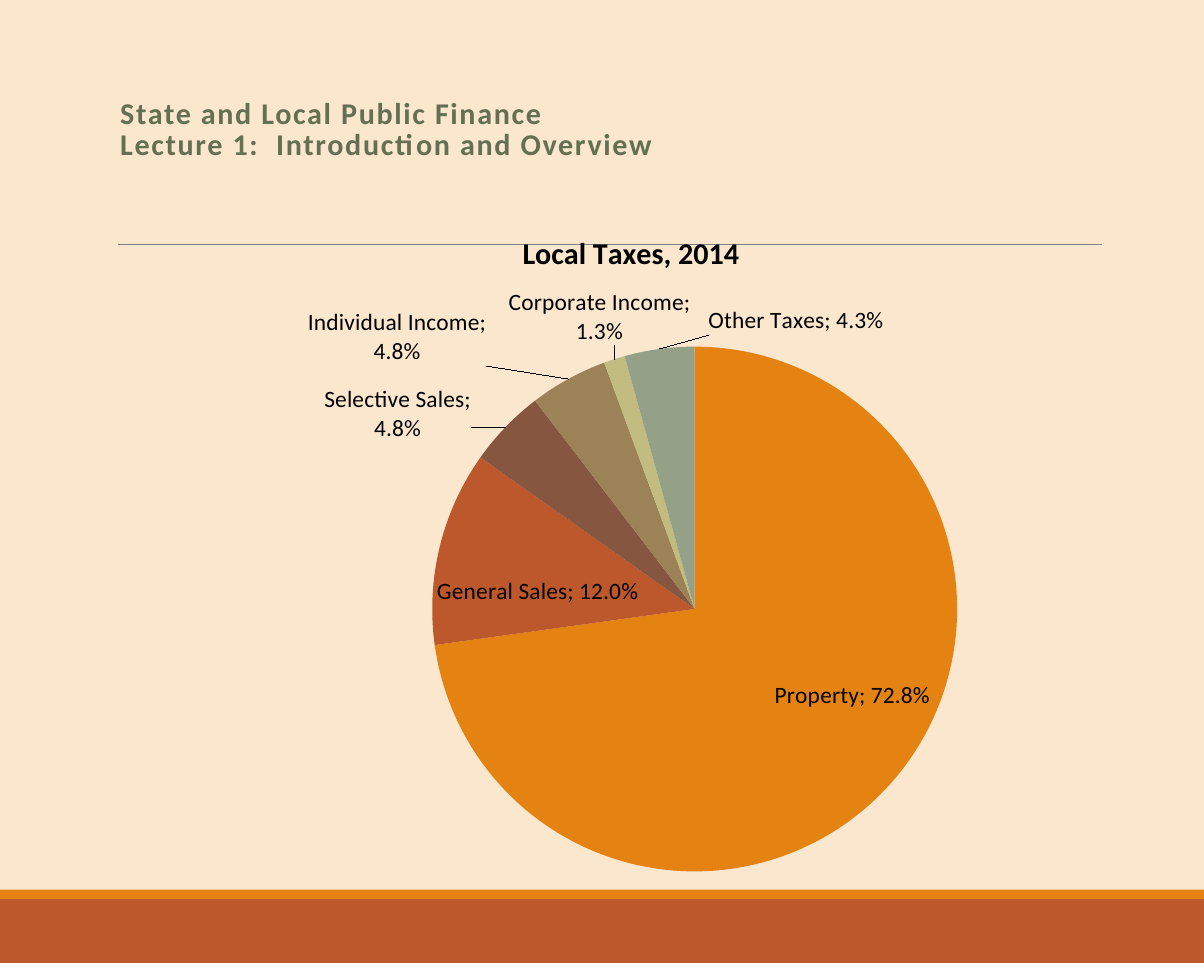
from dataclasses import dataclass
from lxml import etree
from pptx import Presentation
from pptx.chart.data import CategoryChartData as Data
from pptx.dml.color import RGBColor as Rgb
from pptx.enum.chart import XL_CHART_TYPE as Kind
from pptx.enum.shapes import MSO_CONNECTOR as Link, MSO_SHAPE as Form
from pptx.enum.text import MSO_ANCHOR as Anchor
from pptx.oxml import parse_xml
from pptx.oxml.ns import qn
from pptx.util import Inches, Pt


@dataclass
class Theme:
    font: str = "Calibri"
    back: str = "FBE6CE"
    band: str = "BD582C"
    trim: str = "E48312"
    rule: str = "808080"
    head: str = "637052"
    ink: str = "000000"
    big: int = 18
    small: int = 14


HEAD = ["State and Local Public Finance", "Lecture 1:  Introduction and Overview"]
TITLE = "Local Taxes, 2014"
TAXES = [
    ("Property", 0.728, "E48312", "ctr", 0.06, 0),
    ("General Sales", 0.12, "BD582C", "ctr", -0.03, 0.02),
    ("Selective Sales", 0.048, "865640", "outEnd", -0.03, 0.03),
    ("Individual Income", 0.048, "9B8357", "outEnd", -0.08, -0.01),
    ("Corporate Income", 0.013, "C2BC80", "outEnd", 0.08, -0.01),
    ("Other Taxes", 0.043, "94A088", "outEnd", 0.23, -0.01),
]
WIDE, HIGH = 10, 8
BANDS = [(7.47, 0.53, Theme.band), (7.39, 0.08, Theme.trim)]
CHART = (1.12, 1.65, 8.14, 5.74)
MID, RADIUS = (5.77, 5.06), 2.18
FORMAT = "0.0%"
NS = 'xmlns:c="http://schemas.openxmlformats.org/drawingml/2006/chart"'


def tint(fill, color):
    fill.solid()
    fill.fore_color.rgb = Rgb.from_string(color)


def style(font, size, color, bold):
    font.name = Theme.font
    font.size = Pt(size)
    font.bold = bold
    font.color.rgb = Rgb.from_string(color)


def layout(x, y, size=None, inner=False, edge=True):
    rows = [("layoutTarget", "inner")] if inner else []
    if edge:
        rows += [("xMode", "edge"), ("yMode", "edge")]
    rows += [("x", x), ("y", y)]
    if size:
        rows += zip("wh", size)
    body = "".join(f'<c:{tag} val="{val}"/>' for tag, val in rows)
    return f"<c:layout {NS}><c:manualLayout>{body}</c:manualLayout></c:layout>"


def label(i, place, x, y):
    shows = [("LegendKey", 0), ("Val", 1), ("CatName", 1),
             ("SerName", 0), ("Percent", 0), ("BubbleSize", 0)]
    flags = "".join(f'<c:show{tag} val="{val}"/>' for tag, val in shows)
    return parse_xml(
        f'<c:dLbl {NS}><c:idx val="{i}"/>{layout(x, y, edge=False)}'
        f'<c:numFmt formatCode="{FORMAT}" sourceLinked="0"/>'
        f'<c:dLblPos val="{place}"/>{flags}'
        "<c:separator>; </c:separator></c:dLbl>")


def frame(slide):
    tint(slide.background.fill, Theme.back)
    for top, high, color in BANDS:
        band = slide.shapes.add_shape(
            Form.RECTANGLE, 0, Inches(top), Inches(WIDE), Inches(high))
        band.shadow.inherit = False
        tint(band.fill, color)
        band.line.fill.background()
    rule = slide.shapes.add_connector(
        Link.STRAIGHT, Inches(0.98), Inches(2.03), Inches(9.15), Inches(2.03))
    rule.line.width = Pt(0.5)
    rule.line.color.rgb = Rgb.from_string(Theme.rule)
    etree.SubElement(rule._element.spPr, qn("a:effectLst"))


def heading(slide):
    box = slide.shapes.add_textbox(
        Inches(0.9), Inches(0.33), Inches(8.25), Inches(1.06)).text_frame
    box.word_wrap = True
    box.vertical_anchor = Anchor.BOTTOM
    para = box.paragraphs[0]
    para.text = "\v".join(HEAD)
    para.line_spacing = 0.85
    style(para.font, Theme.big, Theme.head, True)
    para.font._element.set("spc", "100")


def pie(slide):
    names, vals, *_ = zip(*TAXES)
    data = Data(number_format=FORMAT)
    data.categories = names
    data.add_series("Series 1", vals)
    left, top, wide, high = CHART
    chart = slide.shapes.add_chart(Kind.PIE, *map(Inches, CHART), data).chart
    style(chart.font, Theme.small, Theme.ink, False)
    chart.has_legend = False

    para = chart.chart_title.text_frame.paragraphs[0]
    para.text = TITLE
    style(para.font, Theme.big, Theme.ink, True)
    title = chart.chart_title._element
    for old in title.findall(qn("c:layout")):
        title.remove(old)
    title.find(qn("c:tx")).addnext(parse_xml(layout(0.39, 0.04)))

    area = chart._chartSpace.chart.plotArea
    for old in area.findall(qn("c:layout")):
        area.remove(old)
    spot = ((MID[0] - RADIUS - left) / wide, (MID[1] - RADIUS - top) / high)
    size = (2 * RADIUS / wide, 2 * RADIUS / high)
    area.insert(0, parse_xml(layout(*spot, size, inner=True)))

    plot = chart.plots[0]
    plot.vary_by_categories = True
    series = plot.series[0]
    tags = series.data_labels
    tags.show_value = tags.show_category_name = True
    tags.number_format = FORMAT
    tags.number_format_is_linked = False
    style(tags.font, Theme.small, Theme.ink, False)
    for i, (_, _, color, place, x, y) in enumerate(TAXES):
        tint(series.points[i].format.fill, color)
        tags._element.insert(i, label(i, place, x, y))


def main():
    deck = Presentation()
    deck.slide_width, deck.slide_height = Inches(WIDE), Inches(HIGH)
    slide = deck.slides.add_slide(deck.slide_layouts[6])
    frame(slide)
    heading(slide)
    pie(slide)
    deck.save("out.pptx")


if __name__ == "__main__":
    main()
